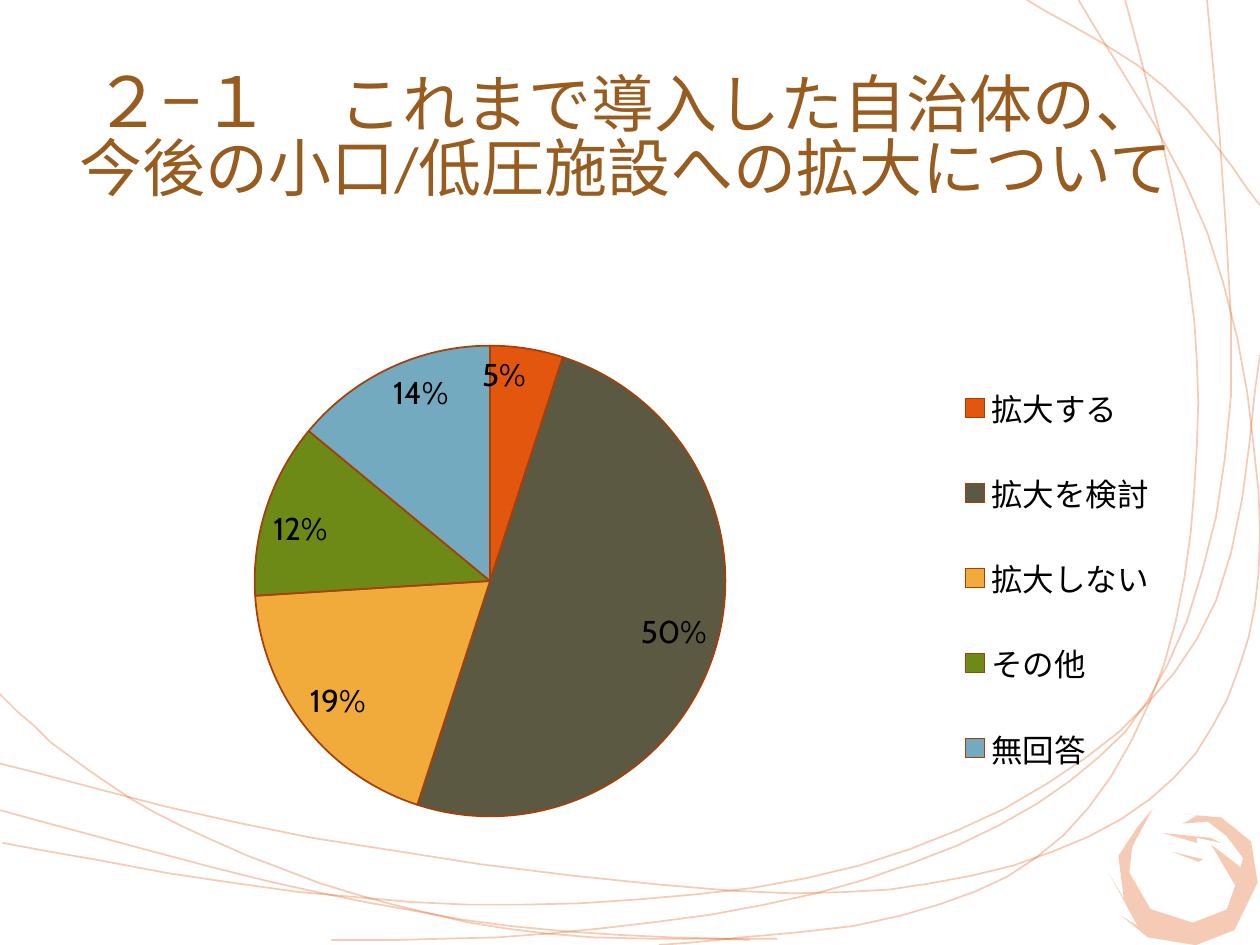
"""Build a slide with a pie chart on plans to extend adoption to small facilities."""
import pptx
import pptx.chart.data
import pptx.dml.color
import pptx.enum.chart
import pptx.enum.text
import pptx.oxml
import pptx.oxml.ns
import pptx.util

Inches = pptx.util.Inches
Pt = pptx.util.Pt
qn = pptx.oxml.ns.qn
ORANGE = "E3560E"
STEPS = 5


def color(value):
    return pptx.dml.color.RGBColor.from_string(value)


def smooth_curve(knots):
    padded = [knots[0], *knots, knots[-1]]
    curve = []
    for before, start, end, after in zip(padded, padded[1:], padded[2:], padded[3:]):
        for step in range(STEPS):
            t = step / STEPS
            curve.append(tuple(
                b + ((c - a) * t + (2 * a - 5 * b + 4 * c - d) * t**2
                     + (3 * b - a - 3 * c + d) * t**3) / 2
                for a, b, c, d in zip(before, start, end, after)))
    return curve + [knots[-1]]


deck = pptx.Presentation()
deck.slide_width = Inches(10)
deck.slide_height = Inches(7.5)
page = deck.slides.add_slide(deck.slide_layouts[6])

strands = [
    [(-3, 548), (55, 600), (145, 656), (283, 710), (434, 741), (617, 745)],
    [(523, 750), (714, 727), (844, 663), (924, 527), (950, 352), (939, 190), (893, 0)],
    [(0, 606), (248, 665), (582, 707), (771, 695), (913, 634), (983, 531), (999, 391),
     (958, 184), (856, 0)],
    [(2, 669), (237, 708), (460, 717), (682, 687), (861, 602), (965, 477), (1000, 282)],
    [(263, 746), (435, 741), (648, 709), (823, 638), (927, 527), (977, 314), (958, 0)],
    [(815, 0), (924, 69), (1000, 163)],
    [(0, 643), (211, 699), (405, 735), (595, 746)],
]
ring = [(922, 639), (902, 667), (897, 687), (910, 718), (942, 733), (970, 726), (979, 708),
        (968, 682), (964, 673), (985, 694), (988, 687), (977, 668), (964, 655), (944, 654),
        (956, 649), (947, 647), (975, 653), (996, 675), (997, 708), (974, 743), (942, 751),
        (905, 740), (886, 720), (898, 730), (881, 686), (890, 707), (890, 673), (908, 652)]
long_stroke = [(922, 661), (961, 665), (969, 669), (950, 665), (950, 669)]
short_stroke = [(930, 676), (955, 682), (951, 684)]

outlines = [(smooth_curve(knots), False, 0) for knots in strands]
outlines += [(ring, True, -7.3), (long_stroke, True, 0), (short_stroke, True, 0)]
for points, filled, angle in outlines:
    builder = page.shapes.build_freeform(*points[0], scale=Inches(0.01))
    builder.add_line_segments(points[1:], close=filled)
    shape = builder.convert_to_shape()
    shape.shadow.inherit = False
    shape.rotation = angle
    if filled:
        paint = shape.fill
        shape.line.fill.background()
    else:
        paint = shape.line.fill
        shape.fill.background()
        shape.line.width = Pt(1)
    paint.solid()
    paint.fore_color.rgb = color(ORANGE)
    for tint in shape.element.iter(qn("a:srgbClr")):
        tint.append(pptx.oxml.parse_xml(
            f'<a:alpha {pptx.oxml.ns.nsdecls("a")} val="30000"/>'))

title = page.shapes.add_textbox(Inches(0.47), Inches(0.47), Inches(9), Inches(1.25))
frame = title.text_frame
frame.word_wrap = True
frame.vertical_anchor = pptx.enum.text.MSO_ANCHOR.MIDDLE
para = frame.paragraphs[0]
para.alignment = pptx.enum.text.PP_ALIGN.CENTER
para.line_spacing = 0.83
para.font.name = "Calibri"
para.font.color.rgb = color("975C1E")
for text, size in [("２−１　", 39.6),
                   ("これまで導入した自治体の、今後の小口/低圧施設への拡大について", 36)]:
    span = para.add_run()
    span.text = text
    span.font.size = Pt(size)

answers = [("拡大する", 5, ORANGE), ("拡大を検討", 50, "5C5943"), ("拡大しない", 19, "F1AB3B"),
           ("その他", 12, "6D8A16"), ("無回答", 14, "73AAC0")]
data = pptx.chart.data.CategoryChartData()
data.categories = [name for name, value, fill in answers]
data.add_series("Series 1", [value for name, value, fill in answers])
chart = page.shapes.add_chart(
    pptx.enum.chart.XL_CHART_TYPE.PIE, Inches(0.47), Inches(2.23), Inches(9), Inches(4.67), data).chart
chart.has_title = False
chart.font.name = "Cabin"
chart.font.size = Pt(18)
chart.font.color.rgb = color("000000")
chart.has_legend = True
chart.legend.position = pptx.enum.chart.XL_LEGEND_POSITION.RIGHT
chart.legend.include_in_layout = False
for tag, index, target, left, top, width, height in [
        ("c:plotArea", 0, '<c:layoutTarget val="inner"/>', 0.05, 0.11, 0.66, 0.8),
        ("c:legend", 1, "", 0.77, 0.11, 0.22, 0.79)]:
    parent = chart.element.find(".//" + qn(tag))
    for old in parent.findall(qn("c:layout")):
        parent.remove(old)
    parent.insert(index, pptx.oxml.parse_xml(
        f'<c:layout {pptx.oxml.ns.nsdecls("c")}><c:manualLayout>{target}'
        '<c:xMode val="edge"/><c:yMode val="edge"/>'
        f'<c:x val="{left}"/><c:y val="{top}"/><c:w val="{width}"/><c:h val="{height}"/>'
        '</c:manualLayout></c:layout>'))

plot = chart.plots[0]
plot.vary_by_categories = True
plot.has_data_labels = True
labels = plot.data_labels
labels.show_percentage = True
labels.show_value = False
labels.number_format = "0%"
labels.number_format_is_linked = False
labels.position = pptx.enum.chart.XL_LABEL_POSITION.INSIDE_END
for index, (name, value, fill) in enumerate(answers):
    wedge = plot.series[0].points[index].format
    wedge.fill.solid()
    wedge.fill.fore_color.rgb = color(fill)
    wedge.line.color.rgb = color("A63F0A")
    wedge.line.width = Pt(1)

deck.save("out.pptx")
